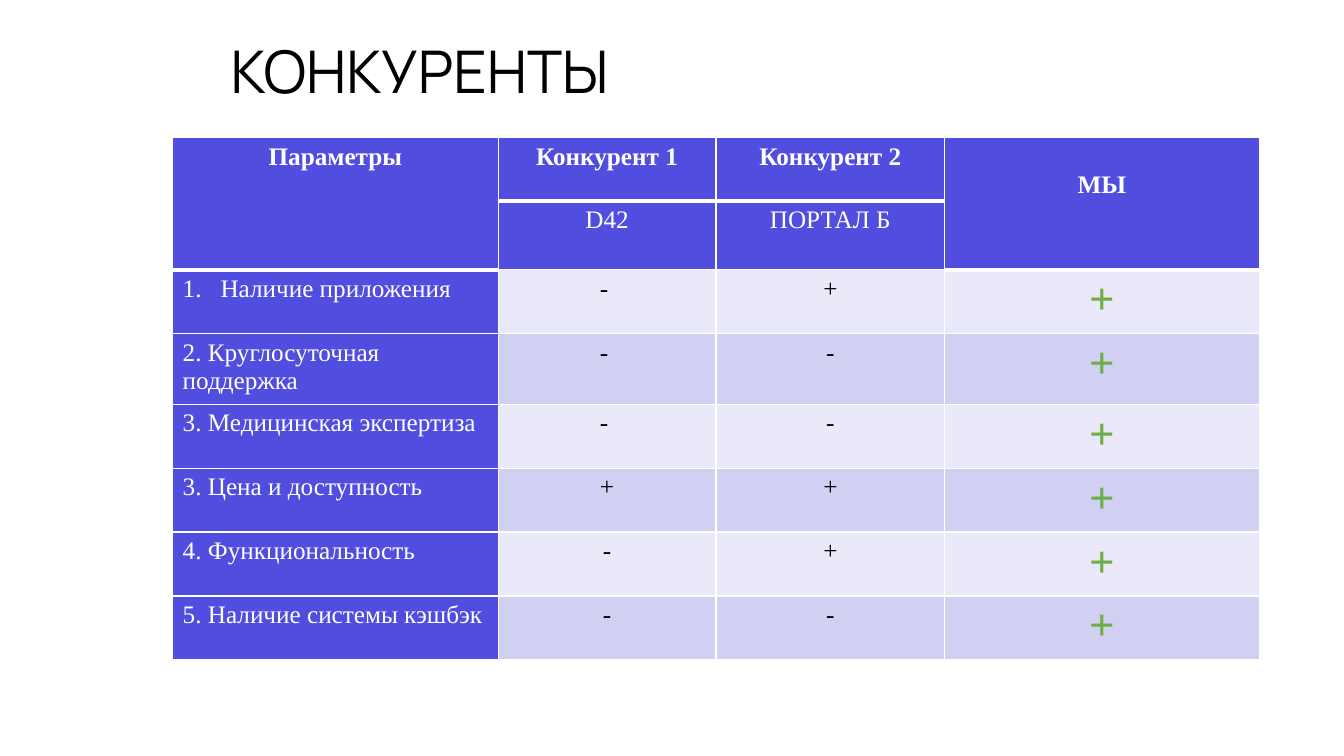
from pptx import Presentation
from pptx import util as u
from pptx.dml.color import RGBColor
from pptx.enum import text
from pptx.oxml import parse_xml
from pptx.oxml.ns import nsdecls

# Content
TITLE = "КОНКУРЕНТЫ"
HEAD = [
    ("Параметры", "Конкурент 1", "Конкурент 2", "МЫ"),
    ("", "D42", "ПОРТАЛ Б", ""),
]
ROWS = [
    ("Наличие приложения", "- ", "+", "+"),
    ("2. Круглосуточная поддержка", "- ", "-", "+"),
    ("3. Медицинская экспертиза", "- ", "-", "+"),
    ("3. Цена и доступность", "+", "+", "+"),
    ("4. Функциональность", "-", "+", "+"),
    ("5. Наличие системы кэшбэк", "-", "-", "+"),
]
COLORS = {"head": "514DDF", "odd": "E9E9F9", "even": "D0D0F3",
          "white": "FFFFFF", "black": "000000", "plus": "70AD47"}
WIDTHS = [232.6, 155.5, 163.5, 224.6]
HIGH, TALL = 45.2, 46.8
TALL_ROWS = (1, 3)


def rgb(key):
    return RGBColor.from_string(COLORS[key])


def style(par, font, size, color, bold=False):
    par.font.name, par.font.size, par.font.bold = font, u.Pt(size), bold
    par.font.color.rgb = rgb(color)


def number(par):
    props = par._p.get_or_add_pPr()
    props.set("marL", str(u.Pt(27)))
    props.set("indent", str(-u.Pt(27)))
    props.append(parse_xml(
        f'<a:buFont {nsdecls("a")} typeface="+mj-lt"/>'))
    props.append(parse_xml(
        f'<a:buAutoNum {nsdecls("a")} type="arabicPeriod"/>'))


def border(cell, low):
    props = cell._tc.get_or_add_tcPr()
    for pos, side in enumerate("LRTB"):
        wide = u.Pt(low if side == "B" else 1)
        props.insert(pos, parse_xml(
            f'<a:ln{side} {nsdecls("a")} w="{wide}"><a:solidFill>'
            f'<a:srgbClr val="{COLORS["white"]}"/></a:solidFill></a:ln{side}>'))


deck = Presentation()
deck.slide_width, deck.slide_height = u.Pt(960), u.Pt(540)
slide = deck.slides.add_slide(deck.slide_layouts[6])

# Title
box = slide.shapes.add_textbox(u.Pt(157.7), u.Pt(22.3), u.Pt(828), u.Pt(61.2))
frame = box.text_frame
frame.word_wrap = True
frame.vertical_anchor = text.MSO_ANCHOR.MIDDLE
par = frame.paragraphs[0]
par.text = TITLE
par.line_spacing = 0.9
style(par, "Manrope", 42, "black")

# Table frame
data = HEAD + ROWS
highs = [TALL if r in TALL_ROWS else HIGH for r in range(len(data))]
grid = slide.shapes.add_table(
    len(data), len(WIDTHS), u.Pt(123.3), u.Pt(98.3),
    u.Pt(sum(WIDTHS)), u.Pt(sum(highs))).table
grid.first_row = grid.horz_banding = False
for col, wide in zip(grid.columns, WIDTHS):
    col.width = u.Pt(wide)
for row, high in zip(grid.rows, highs):
    row.height = u.Pt(high)

# Cells
last = len(WIDTHS) - 1
for r, row in enumerate(data):
    for c, word in enumerate(row):
        cell = grid.cell(r, c)
        head = r < len(HEAD)
        ours = c == last and not head
        fill = "head" if head or c == 0 else ("even" if r % 2 else "odd")
        cell.fill.solid()
        cell.fill.fore_color.rgb = rgb(fill)
        thick = r == 0 or (r == 1 and c in (0, last))
        border(cell, 3 if thick else 1)
        par = cell.text_frame.paragraphs[0]
        par.text = word
        if head or c:
            par.alignment = text.PP_ALIGN.CENTER
        if r == len(HEAD) and c == 0:
            number(par)
        color = "plus" if ours else "white" if fill == "head" else "black"
        style(par, "Times New Roman", 32 if ours else 18, color,
              r == 0 or ours)

# Merged headings
for c in (0, last):
    grid.cell(0, c).merge(grid.cell(1, c))
grid.cell(0, last).margin_top = u.Pt(24)

deck.save("out.pptx")
